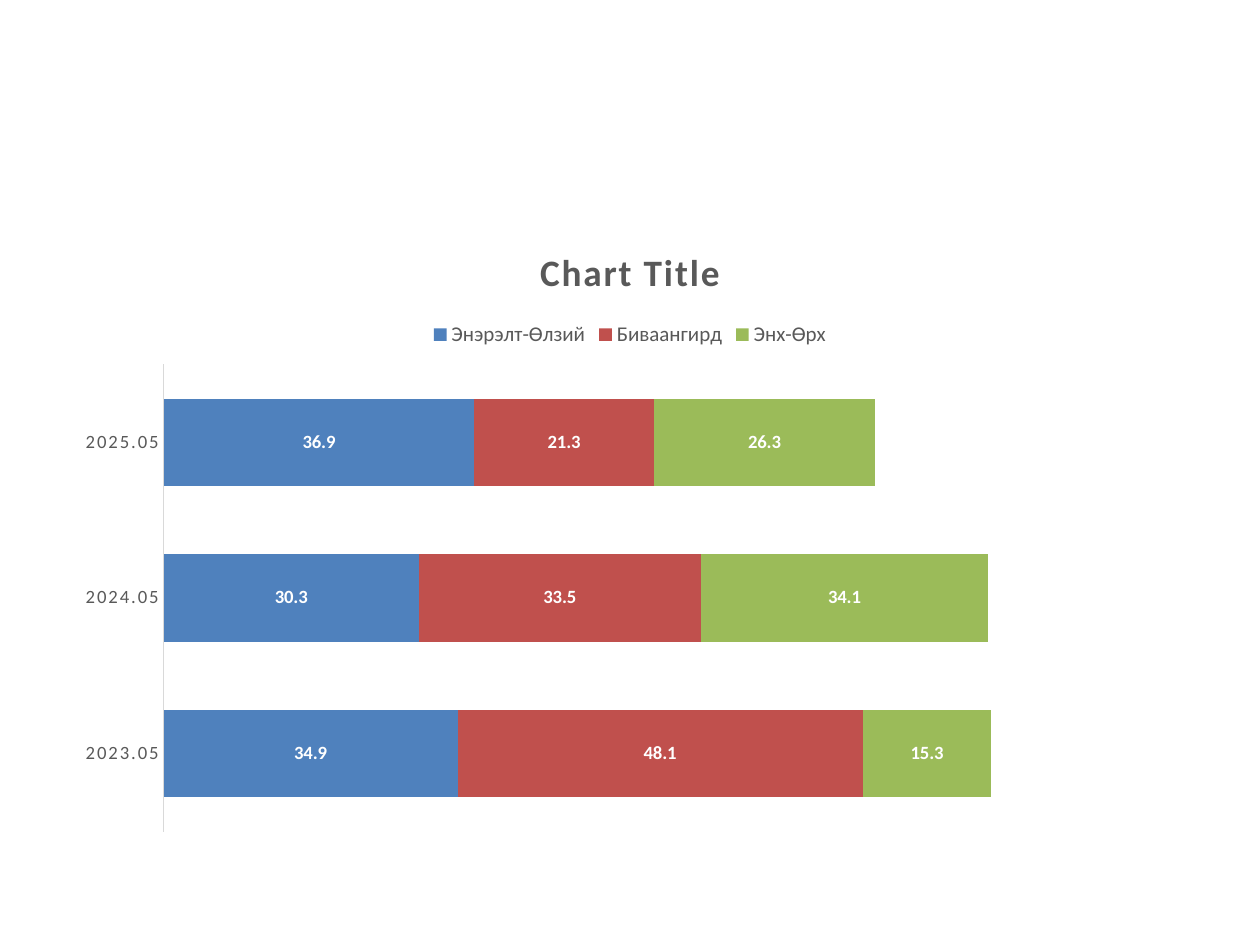
from pptx import Presentation
from pptx.chart.data import CategoryChartData
from pptx.dml.color import RGBColor
from pptx.enum.chart import XL_CHART_TYPE, XL_LABEL_POSITION, XL_LEGEND_POSITION, XL_TICK_MARK
from pptx.util import Inches, Pt

TITLE = "Chart Title"
MONTHS = ["2023.05", "2024.05", "2025.05"]
SERIES = [
    ("Энэрэлт-Өлзий", (34.9, 30.3, 36.9), "blue"),
    ("Биваангирд", (48.1, 33.5, 21.3), "red"),
    ("Энх-Өрх", (15.3, 34.1, 26.3), "green"),
]
COLORS = {
    "blue": "4F81BD",
    "red": "C0504D",
    "green": "9BBB59",
    "text": "595959",
    "axis": "D9D9D9",
    "label": "FFFFFF",
}
SMALL, LARGE = 10.64, 21.28


def rgb(name):
    return RGBColor.from_string(COLORS[name])


def style(font, size, color, bold=False):
    font.name, font.size, font.bold = "Calibri", Pt(size), bold
    font.color.rgb = rgb(color)


def space_letters(props):
    props.set("kern", "1200")
    props.set("spc", "120")


def add_stacked_bars(s):
    data = CategoryChartData(number_format="0.0")
    data.categories = MONTHS
    for name, values, _ in SERIES:
        data.add_series(name, values)
    frame = s.shapes.add_chart(XL_CHART_TYPE.BAR_STACKED, Inches(0.5), Inches(1.75),
                               Inches(9), Inches(4.95), data)
    chart = frame.chart
    chart.font.name, chart.font.size = "Calibri", Pt(10)

    chart.has_title = True
    p = chart.chart_title.text_frame.paragraphs[0]
    r = p.add_run()
    r.text = TITLE
    style(r.font, LARGE, "text", True)
    space_letters(r._r.get_or_add_rPr())

    chart.has_legend = True
    chart.legend.position = XL_LEGEND_POSITION.TOP
    chart.legend.include_in_layout = False
    style(chart.legend.font, 12, "text")

    months = chart.category_axis
    months.major_tick_mark = months.minor_tick_mark = XL_TICK_MARK.NONE
    months.format.line.color.rgb = rgb("axis")
    months.format.line.width = Pt(0.75)
    style(months.tick_labels.font, SMALL, "text")
    for props in months._element.xpath(".//a:defRPr"):
        space_letters(props)

    values = chart.value_axis
    values.has_major_gridlines = False
    values.minimum_scale, values.maximum_scale = 0, 120
    values.visible = False

    plot = chart.plots[0]
    plot.gap_width, plot.overlap = 79, 100
    plot.vary_by_categories = False
    for series, (_, _, color) in zip(plot.series, SERIES):
        series.format.fill.solid()
        series.format.fill.fore_color.rgb = rgb(color)
        labels = series.data_labels
        labels.show_value = True
        labels.position = XL_LABEL_POSITION.CENTER
        style(labels.font, SMALL, "label", True)


def main():
    """Build the slide with one stacked bar chart."""
    prs = Presentation()
    prs.slide_width, prs.slide_height = Inches(10), Inches(7.5)
    s = prs.slides.add_slide(prs.slide_layouts[6])
    add_stacked_bars(s)
    prs.save("out.pptx")


if __name__ == "__main__":
    main()
